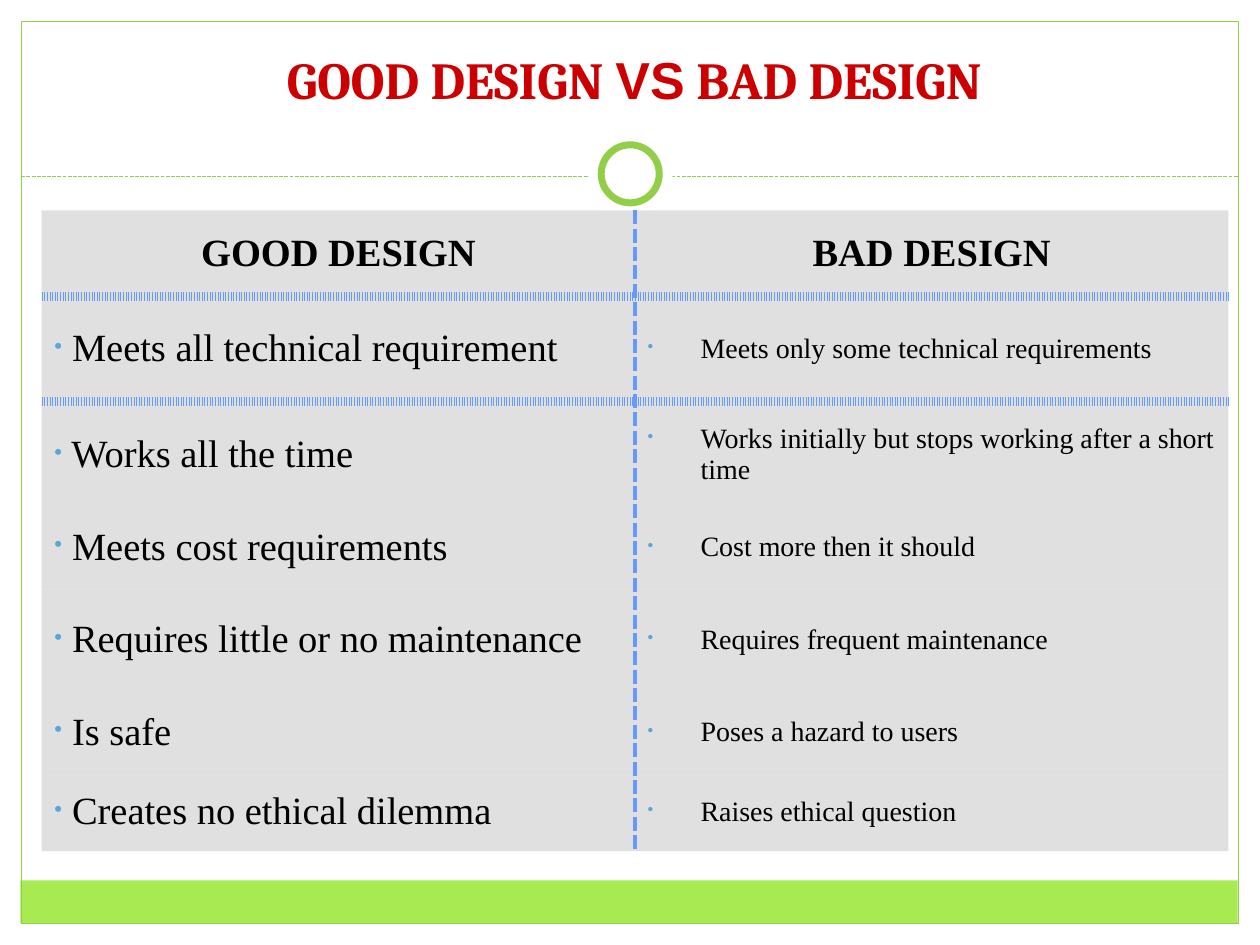
from lxml import etree
from pptx import Presentation
from pptx import util as u
from pptx.dml.color import RGBColor
from pptx.enum import dml, shapes, text
from pptx.oxml.ns import qn

WHITE = RGBColor(0xFF, 0xFF, 0xFF)
BLACK = RGBColor(0, 0, 0)
RED = RGBColor(0xCC, 0, 0)
LIME = RGBColor(0xA7, 0xEA, 0x52)
GREEN = RGBColor(0x93, 0xCE, 0x48)
GREY = RGBColor(0xB2, 0xB2, 0xB2)
BLUE = RGBColor(0x66, 0x99, 0xFF)
BULLET_BLUE = RGBColor(0x59, 0xA8, 0xD1)
NO_STYLE = "{2D5ABB26-0587-4C30-8999-92F81FD0307C}"
DIVIDER = (2.25, "sysDash")
HEADER_RULE = (6, "dot")

HEADINGS = ("GOOD DESIGN", "BAD DESIGN")
COMPARISON = [
    (" Meets all technical requirement", "Meets only some technical requirements"),
    (" Works all the time", "Works initially but stops working after a short time"),
    (" Meets cost requirements", "Cost more then it should"),
    (" Requires little or no maintenance", "Requires frequent maintenance"),
    (" Is safe", "Poses a hazard to users"),
    (" Creates no ethical dilemma", "Raises ethical question"),
]
ROW_HEIGHTS = (1.73, 2.13, 2.13, 1.6, 2.13, 1.6, 1.6)
COLUMN_WIDTH = 11.96


def child(parent, tag, **attributes):
    return etree.SubElement(parent, qn(tag), attributes)


class ComparisonSlide:
    body_font = "Times New Roman"

    def __init__(self, deck):
        self.page = deck.slides.add_slide(deck.slide_layouts[5])

    def shape(self, kind, left, top, width, height, fill=None, line=None, weight=0.75):
        box = self.page.shapes.add_shape(kind, *map(u.Cm, (left, top, width, height)))
        box.shadow.inherit = False
        if fill is None:
            box.fill.background()
        else:
            box.fill.solid()
            box.fill.fore_color.rgb = fill
        if line is None:
            box.line.fill.background()
        else:
            box.line.color.rgb = line
            box.line.width = u.Pt(weight)

    def dashed_rule(self, left, right, top):
        rule = self.page.shapes.add_connector(
            shapes.MSO_CONNECTOR.STRAIGHT, u.Cm(left), u.Cm(top), u.Cm(right), u.Cm(top))
        rule.line.color.rgb = GREEN
        rule.line.width = u.Pt(0.75)
        rule.line.dash_style = dml.MSO_LINE.SQUARE_DOT
        child(rule.element.spPr, "a:effectLst")

    def title(self, spans, left, top, width, height):
        box = self.page.shapes.title
        self.page.shapes.element.append(box.element)
        box.left, box.top, box.width, box.height = map(u.Cm, (left, top, width, height))
        frame = box.text_frame
        frame.auto_size = text.MSO_AUTO_SIZE.NONE
        frame.vertical_anchor = text.MSO_ANCHOR.BOTTOM
        para = frame.paragraphs[0]
        para.alignment = text.PP_ALIGN.CENTER
        para.font.size = u.Pt(29.7)
        para.font.bold = True
        para.font.color.rgb = RED
        for words, font in spans:
            span = para.add_run()
            span.text = words
            span.font.name = font

    def table(self, rows, left, top):
        width = COLUMN_WIDTH * len(HEADINGS)
        frame = self.page.shapes.add_table(
            len(rows), len(HEADINGS),
            *map(u.Cm, (left, top, width, sum(ROW_HEIGHTS))))
        frame.element.find(".//" + qn("a:tableStyleId")).text = NO_STYLE
        grid = frame.table
        grid.first_row = grid.horz_banding = False
        for column in grid.columns:
            column.width = u.Cm(COLUMN_WIDTH)
        for row, height in zip(grid.rows, ROW_HEIGHTS):
            row.height = u.Cm(height)
        for r, row in enumerate(rows):
            for c, words in enumerate(row):
                cell = grid.cell(r, c)
                self.borders(cell, r, c)
                self.cell_fill(cell)
                self.cell_text(cell, words, heading=r == 0, hanging=c == 1)

    def borders(self, cell, row, column):
        sides = {"a:lnL" if column else "a:lnR": DIVIDER}
        if row < 2:
            sides["a:lnT" if row else "a:lnB"] = HEADER_RULE
        properties = cell._tc.get_or_add_tcPr()
        for side, (weight, dash) in sides.items():
            line = child(properties, side, w=str(u.Pt(weight)))
            child(child(line, "a:solidFill"), "a:srgbClr", val=str(BLUE))
            child(line, "a:prstDash", val=dash)

    def cell_fill(self, cell):
        cell.fill.solid()
        cell.fill.fore_color.rgb = GREY
        fill = cell._tc.tcPr.find(qn("a:solidFill"))
        child(fill[0], "a:alpha", val="40000")

    def cell_text(self, cell, words, heading, hanging):
        size = 16 if hanging and not heading else 22
        cell.vertical_anchor = text.MSO_ANCHOR.MIDDLE
        para = cell.text_frame.paragraphs[0]
        para.text = words
        para.space_before = u.Pt(size * 0.2)
        if heading:
            para.alignment = text.PP_ALIGN.CENTER
        else:
            self.bullet(para, 1.07 if hanging else 0)
        para.font.name = self.body_font
        para.font.size = u.Pt(size)
        para.font.bold = heading
        para.font.color.rgb = BLACK

    def bullet(self, para, indent):
        properties = para._p.get_or_add_pPr()
        properties.set("marL", str(u.Cm(indent)))
        properties.set("indent", str(-u.Cm(indent)))
        child(child(properties, "a:buClr"), "a:srgbClr", val=str(BULLET_BLUE))
        child(properties, "a:buSzPct", val="60000")
        child(properties, "a:buChar", char="•")


def main():
    deck = Presentation()
    deck.slide_width, deck.slide_height = u.Cm(25.4), u.Cm(19.05)
    slide = ComparisonSlide(deck)
    rectangle, oval = shapes.MSO_SHAPE.RECTANGLE, shapes.MSO_SHAPE.OVAL

    slide.shape(rectangle, 0, 0, 25.4, 3.86, WHITE)
    for left in (0, 24.97):
        slide.shape(rectangle, left, 0, 0.43, 19.05, WHITE)
    slide.shape(rectangle, 0.41, 17.75, 24.54, 0.86, LIME)
    slide.shape(rectangle, 0.43, 0.43, 24.54, 18.19, line=GREEN)
    slide.dashed_rule(0.43, 24.97, 3.56)
    slide.shape(oval, 11.86, 2.67, 1.7, 1.7, WHITE)
    slide.shape(oval, 12.12, 2.92, 1.17, 1.17, WHITE, GREEN, 4)

    slide.title([("GOOD DESIGN ", "Cambria"), ("VS", "Arial"), (" BAD DESIGN ", "Cambria")],
                2.11, 1.07, 21.59, 1.27)
    slide.table([HEADINGS, *COMPARISON], 0.84, 4.24)
    deck.save("out.pptx")


if __name__ == "__main__":
    main()
